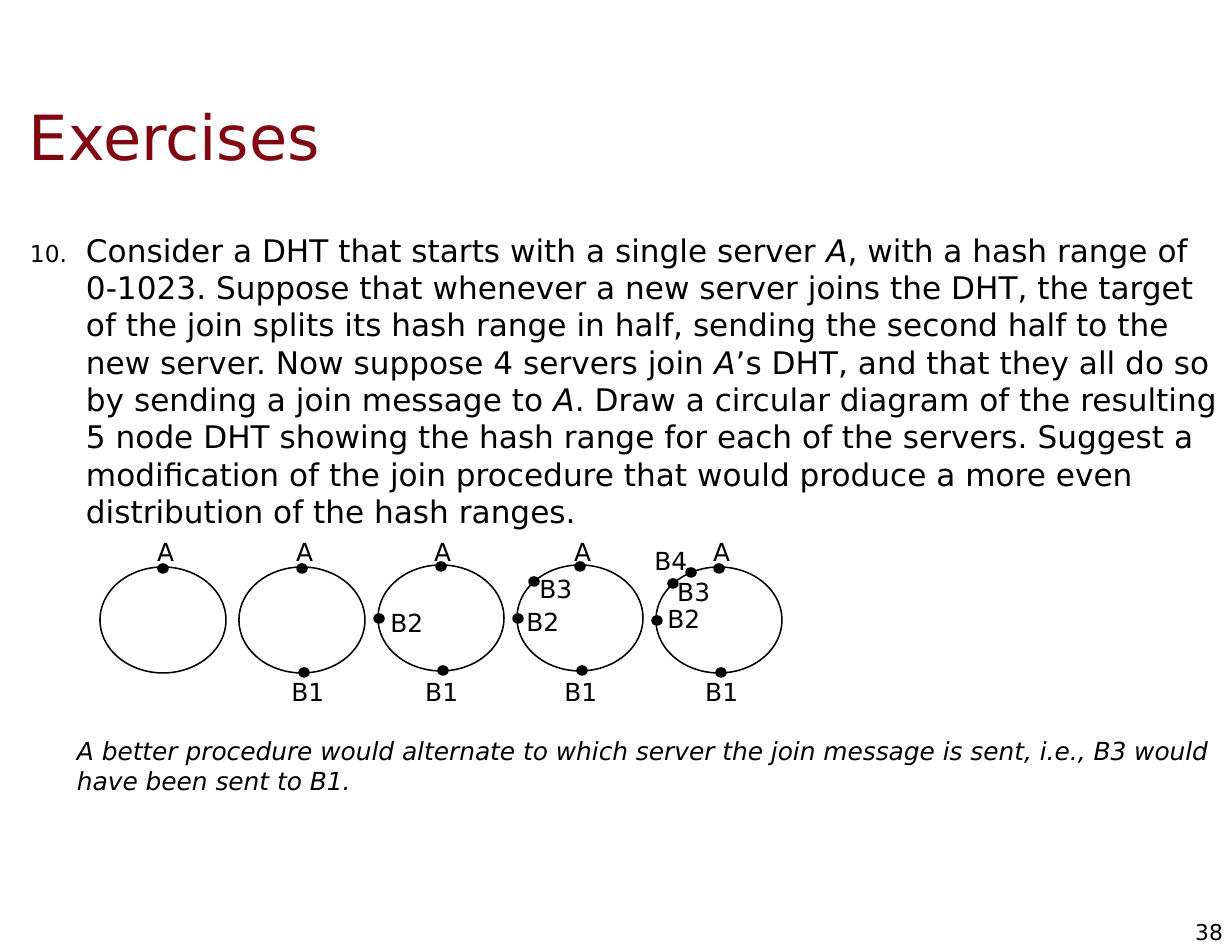
from lxml import etree
from pptx import Presentation
from pptx.dml.color import RGBColor
from pptx.enum.shapes import MSO_SHAPE
from pptx.enum.text import MSO_ANCHOR, MSO_AUTO_SIZE, PP_ALIGN
from pptx.oxml.ns import qn
from pptx.util import Emu, Pt

OVAL = MSO_SHAPE.OVAL
TOP, MIDDLE = MSO_ANCHOR.TOP, MSO_ANCHOR.MIDDLE
LEFT, RIGHT = PP_ALIGN.LEFT, PP_ALIGN.RIGHT
GROW = MSO_AUTO_SIZE.SHAPE_TO_FIT_TEXT
BLACK = RGBColor(0x00, 0x00, 0x00)
MAROON = RGBColor(0x7F, 0x08, 0x13)
FONT = "DejaVu Sans"
EMU_PER_PX = 914400 / 112

TITLE = [("Exercises", False)]
QUESTION = [
    ("Consider a DHT that starts with a single server ", False),
    ("A", True),
    (", with a hash range of 0-1023. Suppose that whenever a new server joins the DHT, "
     "the target of the join splits its hash range in half, sending the second half to "
     "the new server. Now suppose 4 servers join ", False),
    ("A", True),
    ("’s DHT, and that they all do so by sending a join message to ", False),
    ("A", True),
    (". Draw a circular diagram of the resulting 5 node DHT showing the hash range for "
     "each of the servers. Suggest a modification of the join procedure that would "
     "produce a more even distribution of the hash ranges.", False),
]
ANSWER = [("A better procedure would alternate to which server the join message is sent, "
           "i.e., B3 would have been sent to B1.", True)]
PAGE_NUMBER = [("38", False)]

RING_LEFT, RING_PITCH, RING_SIZE = 100, 139, (126, 106)
DOT_SIZE = (10, 9)
DOT_OFFSETS = {"A": (58, -3), "B1": (60, 101), "B2": (-4, 49), "B3": (12, 12), "B4": (30, 1)}
LABEL_WIDTHS = {"A": 54, "B1": 66, "B2": 66, "B3": 66, "B4": 66}
LABEL_HEIGHT = 41
RINGS = [
    (567, {"A": (31, -36)}),
    (567, {"A": (31, -36), "B1": (30, 104)}),
    (565, {"A": (30, -34), "B1": (25, 106), "B2": (-10, 37)}),
    (565, {"A": (31, -34), "B1": (25, 106), "B2": (-13, 36), "B3": (0, 3)}),
    (567, {"A": (31, -36), "B1": (27, 104), "B2": (-11, 31), "B3": (-1, 4), "B4": (-24, -27)}),
]


def px(*lengths):
    return [Emu(round(length * EMU_PER_PX)) for length in lengths]


def add_text(slide, box, runs, size, color=BLACK, align=LEFT, insets=(12, 7), **frame_format):
    frame = slide.shapes.add_textbox(*px(*box)).text_frame
    horizontal, vertical = px(*insets)
    settings = {"word_wrap": True, "vertical_anchor": TOP,
                "margin_left": horizontal, "margin_right": horizontal,
                "margin_top": vertical, "margin_bottom": vertical}
    for name, value in {**settings, **frame_format}.items():
        setattr(frame, name, value)
    paragraph = frame.paragraphs[0]
    paragraph.alignment = align
    for text, italic in runs:
        run = paragraph.add_run()
        run.text = text
        run.font.color.rgb = color
        for name, value in {"name": FONT, "size": Pt(size), "italic": italic}.items():
            setattr(run.font, name, value)
    return paragraph


def number_paragraph(paragraph, start):
    properties = paragraph._p.get_or_add_pPr()
    margin, indent = px(72, -56)
    properties.set("marL", str(margin))
    properties.set("indent", str(indent))
    color = etree.SubElement(properties, qn("a:buClr"))
    etree.SubElement(color, qn("a:srgbClr"), val=str(BLACK))
    etree.SubElement(properties, qn("a:buSzPct"), val="75000")
    etree.SubElement(properties, qn("a:buFont"), typeface=FONT)
    etree.SubElement(properties, qn("a:buAutoNum"), type="arabicPeriod", startAt=str(start))


def add_ellipse(slide, left, top, size, filled):
    shape = slide.shapes.add_shape(OVAL, *px(left, top, *size))
    shape.shadow.inherit = False
    shape.line.color.rgb = BLACK
    shape.line.width = Pt(1)
    if filled:
        shape.fill.solid()
        shape.fill.fore_color.rgb = BLACK
    else:
        shape.fill.background()


def add_ring(slide, left, top, labels):
    add_ellipse(slide, left, top, RING_SIZE, False)
    for name, (label_x, label_y) in labels.items():
        dot_x, dot_y = DOT_OFFSETS[name]
        add_ellipse(slide, left + dot_x, top + dot_y, DOT_SIZE, True)
        box = (left + label_x, top + label_y, LABEL_WIDTHS[name], LABEL_HEIGHT)
        add_text(slide, box, [(name, False)], 16, align=RIGHT, insets=(11, 6), auto_size=GROW)


def main():
    """Build the exercise slide with its hash ring diagrams."""
    presentation = Presentation()
    presentation.slide_width, presentation.slide_height = px(1232, 952)
    slide = presentation.slides.add_slide(presentation.slide_layouts[6])

    add_text(slide, (17, 78, 1179, 116), TITLE, 40, MAROON, vertical_anchor=MIDDLE)
    question = add_text(slide, (2, 224, 1230, 312), QUESTION, 20)
    number_paragraph(question, 10)
    for index, (top, labels) in enumerate(RINGS):
        add_ring(slide, RING_LEFT + index * RING_PITCH, top, labels)
    add_text(slide, (65, 729, 1167, 73), ANSWER, 16)
    add_text(slide, (1185, 918, 38, 27), PAGE_NUMBER, 14, align=RIGHT, insets=(0, 0),
             vertical_anchor=MIDDLE, word_wrap=False, auto_size=GROW)
    presentation.save("out.pptx")


if __name__ == "__main__":
    main()
